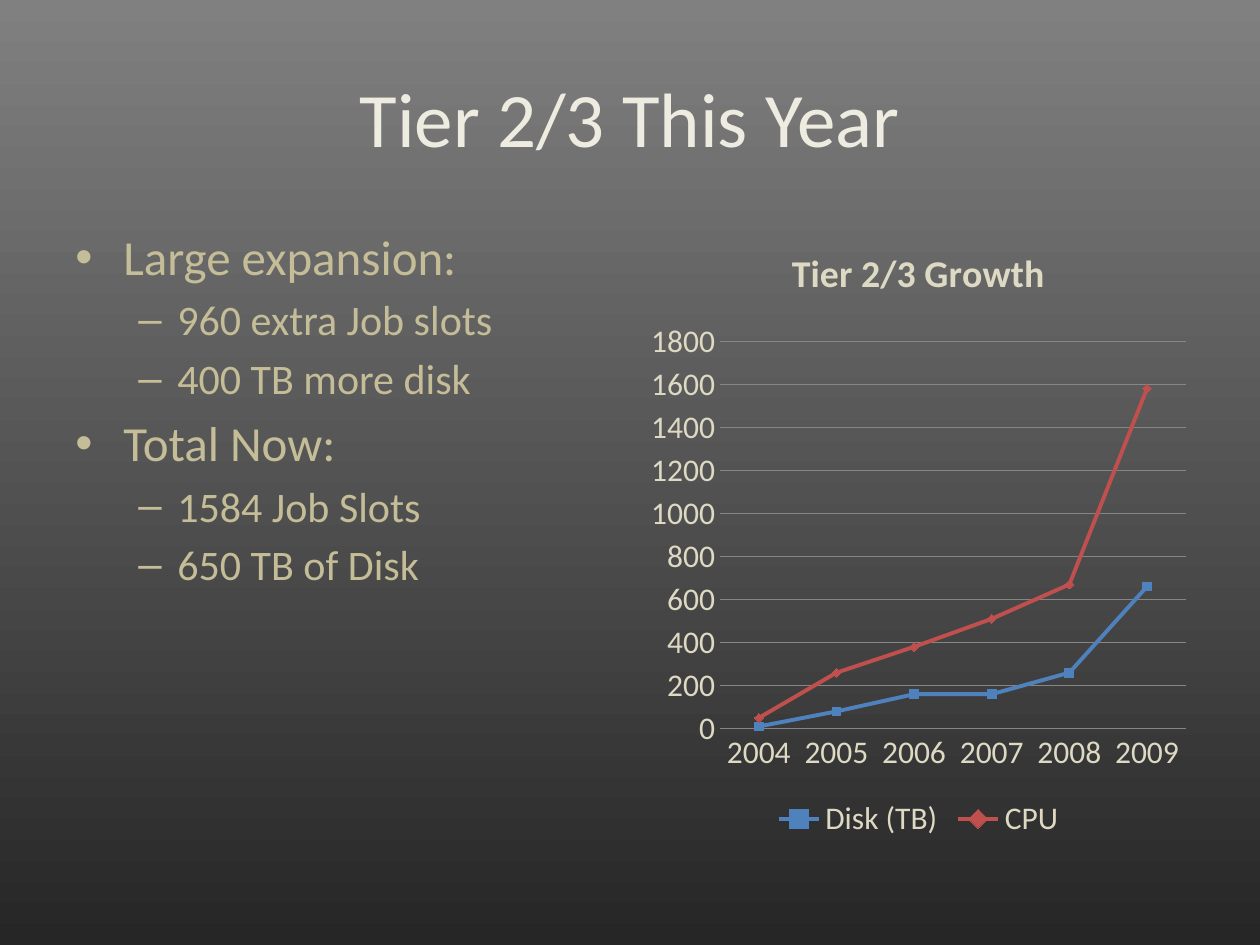
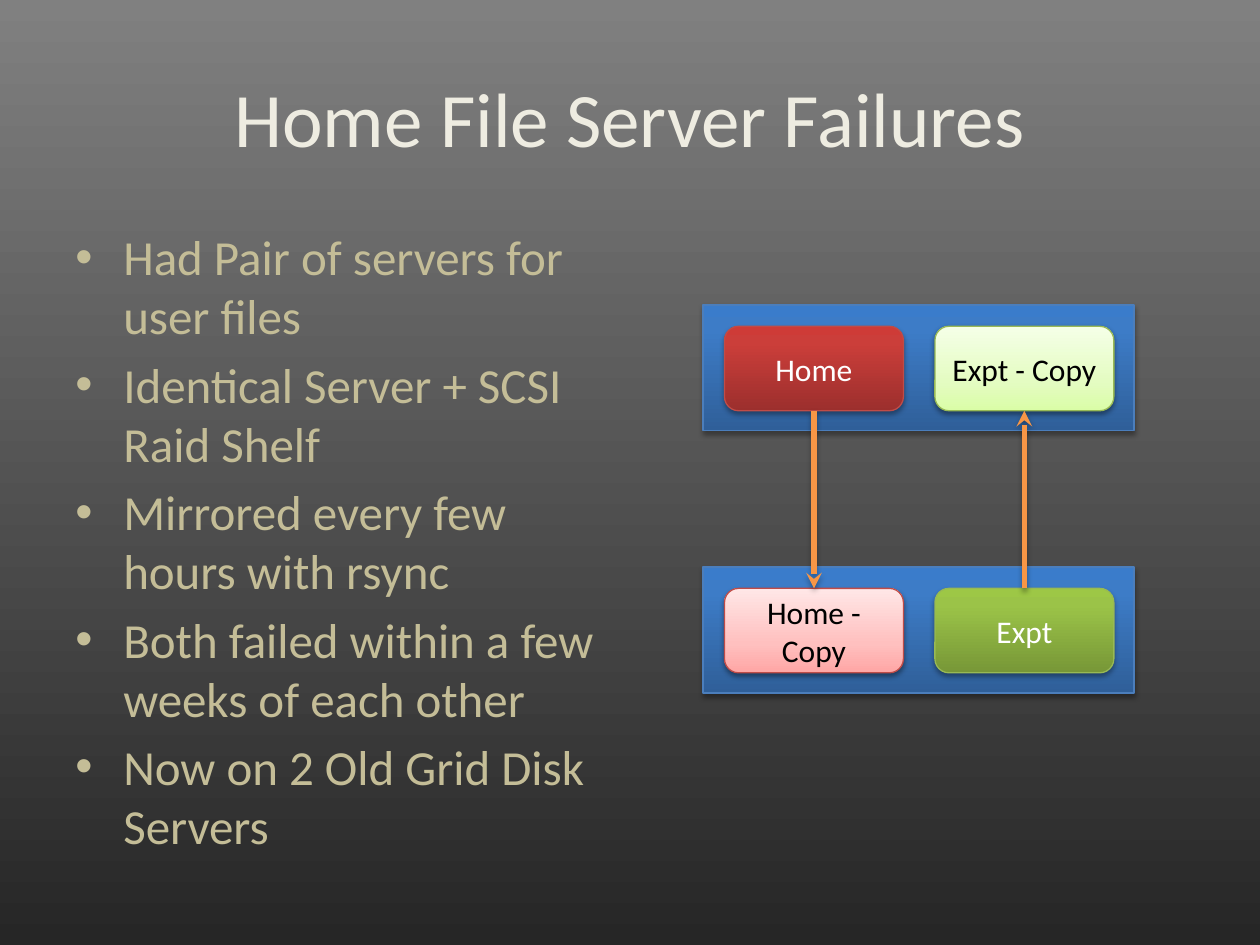
from copy import deepcopy

from lxml import etree
from pptx import Presentation
from pptx import util as u
from pptx.chart.data import CategoryChartData
from pptx.dml.color import RGBColor
from pptx.enum import chart as charts, shapes, text
from pptx.oxml.ns import qn

FONT = "Calibri"
IVORY, SAND, PALE = "EEECE1", "C4BD97", "DDD9C3"
WHITE, BLACK, GRID, ORANGE = "FFFFFF", "000000", "868686", "F79646"
BACKDROP = [(0, "808080"), (100, "262626")]
BLUE = [(0, "2F5F99"), (80, "3D7CC7"), (100, "3A7CCB")]
RED = [(0, "9C2F2D"), (80, "CB3E3A"), (100, "CE3B37")]
GREEN = [(0, "779737"), (80, "9BC348"), (100, "9DC746")]
PINK = [(0, "FFA6A5"), (35, "FFC0BF"), (100, "FFE7E7")]
LIME = [(0, "DAFDA7"), (35, "E4FCC2"), (100, "F5FFE7")]
BLUE_EDGE, RED_EDGE, GREEN_EDGE = "4B7EBC", "BF4C48", "98B955"
BULLETS = [("•", 28, 0.38, 0.38), ("–", 24, 0.81, 0.31)]


def color(value):
    return RGBColor.from_string(value)


class Deck:
    def __init__(self):
        self.prs = Presentation()
        self.prs.slide_width, self.prs.slide_height = u.Inches(10), u.Inches(7.5)
        self.slide = None

    def new_slide(self, title):
        self.slide = self.prs.slides.add_slide(self.prs.slide_layouts[6])
        self.gradient(self.slide.background.fill, self.slide.element, BACKDROP, 270)
        frame = self.textbox(0.5, 0.3, 9, 1.25)
        frame.vertical_anchor = text.MSO_ANCHOR.MIDDLE
        frame.paragraphs[0].alignment = text.PP_ALIGN.CENTER
        self.run(frame.paragraphs[0], title, 44, IVORY)

    def gradient(self, fill, element, stops, angle):
        fill.gradient()
        fill.gradient_angle = angle
        stop_list = next(element.iter(qn("a:gsLst")))
        for _ in stops[2:]:
            stop_list.append(deepcopy(stop_list[0]))
        for stop, (percent, value) in zip(fill.gradient_stops, stops):
            stop.position = percent / 100
            stop.color.rgb = color(value)

    def shadow(self, shape, alpha=35, distance=1.8):
        effects = etree.SubElement(shape.element.spPr, qn("a:effectLst"))
        outer = etree.SubElement(effects, qn("a:outerShdw"), blurRad=str(u.Pt(3.1)),
                                 dist=str(u.Pt(distance)), dir="5400000", rotWithShape="0")
        black = etree.SubElement(outer, qn("a:srgbClr"), val=BLACK)
        etree.SubElement(black, qn("a:alpha"), val=str(alpha * 1000))

    def textbox(self, left, top, width, height):
        box = self.slide.shapes.add_textbox(*map(u.Inches, (left, top, width, height)))
        box.text_frame.word_wrap = True
        return box.text_frame

    def run(self, paragraph, words, size, value):
        run = paragraph.add_run()
        run.text = words
        run.font.name, run.font.size = FONT, u.Pt(size)
        run.font.color.rgb = color(value)

    def bullets(self, items):
        frame = self.textbox(0.5, 1.75, 4.42, 4.95)
        for index, (level, words) in enumerate(items):
            paragraph = frame.add_paragraph() if index else frame.paragraphs[0]
            mark, size, margin, hang = BULLETS[level]
            paragraph.level = level
            paragraph.space_before = u.Pt(size * 0.2)
            props = paragraph._p.get_or_add_pPr()
            props.set("marL", str(u.Inches(margin)))
            props.set("indent", str(-u.Inches(hang)))
            etree.SubElement(props, qn("a:buFont"), typeface="Arial")
            etree.SubElement(props, qn("a:buChar"), char=mark)
            self.run(paragraph, words, size, SAND)

    def panel(self, kind, left, top, width, height, stops, edge, **shadow):
        shape = self.slide.shapes.add_shape(kind, *map(u.Inches, (left, top, width, height)))
        self.gradient(shape.fill, shape.element, stops, 90)
        shape.line.color.rgb = color(edge)
        shape.line.width = u.Pt(0.75)
        self.shadow(shape, **shadow)
        return shape

    def server(self, left, top):
        self.panel(shapes.MSO_SHAPE.RECTANGLE, left, top, 3.42, 1, BLUE, BLUE_EDGE)

    def store(self, left, top, label, stops, edge, is_copy):
        shadow = {"alpha": 38, "distance": 1.6} if is_copy else {}
        store = self.panel(shapes.MSO_SHAPE.ROUNDED_RECTANGLE, left, top, 1.42, 0.67,
                           stops, edge, **shadow)
        frame = store.text_frame
        frame.word_wrap = True
        frame.vertical_anchor = text.MSO_ANCHOR.MIDDLE
        frame.paragraphs[0].alignment = text.PP_ALIGN.CENTER
        self.run(frame.paragraphs[0], label, 18, BLACK if is_copy else WHITE)
        return store

    def arrow(self, source, source_side, target, target_side):
        arrow = self.slide.shapes.add_connector(shapes.MSO_CONNECTOR.STRAIGHT, 0, 0, 0, 0)
        arrow.begin_connect(source, source_side)
        arrow.end_connect(target, target_side)
        arrow.line.color.rgb = color(ORANGE)
        arrow.line.width = u.Pt(3)
        etree.SubElement(arrow.line._get_or_add_ln(), qn("a:tailEnd"), type="stealth")
        self.shadow(arrow)

    def chart_font(self, font, size=18, bold=False):
        font.name, font.size, font.bold = FONT, u.Pt(size), bold
        font.color.rgb = color(PALE)

    def line_chart(self, title, categories, series):
        data = CategoryChartData()
        data.categories = categories
        for name, values, *_ in series:
            data.add_series(name, values)
        chart = self.slide.shapes.add_chart(
            charts.XL_CHART_TYPE.LINE_MARKERS,
            *map(u.Inches, (5.08, 1.75, 4.42, 4.95)), data).chart
        self.chart_font(chart.font)
        chart.has_title = True
        heading = chart.chart_title.text_frame.paragraphs[0].add_run()
        heading.text = title
        self.chart_font(heading.font, 21.6, True)
        chart.has_legend = True
        chart.legend.position = charts.XL_LEGEND_POSITION.BOTTOM
        chart.legend.include_in_layout = False
        self.chart_font(chart.legend.font)
        for axis in (chart.category_axis, chart.value_axis):
            axis.major_tick_mark = axis.minor_tick_mark = charts.XL_TICK_MARK.NONE
            self.chart_font(axis.tick_labels.font)
        chart.value_axis.format.line.fill.background()
        chart.value_axis.has_major_gridlines = True
        for rule in (chart.category_axis, chart.value_axis.major_gridlines):
            rule.format.line.color.rgb = color(GRID)
            rule.format.line.width = u.Pt(0.75)
        chart.plots[0].vary_by_categories = False
        for plotted, (_, _, value, marker) in zip(chart.plots[0].series, series):
            plotted.smooth = False
            plotted.format.line.color.rgb = color(value)
            plotted.format.line.width = u.Pt(2.25)
            plotted.marker.style, plotted.marker.size = marker, 5
            plotted.marker.format.fill.solid()
            plotted.marker.format.fill.fore_color.rgb = color(value)
            plotted.marker.format.line.color.rgb = color(value)


def growth_slide(deck):
    deck.new_slide("Tier 2/3 This Year")
    deck.bullets([
        (0, "Large expansion:"), (1, "960 extra Job slots"), (1, "400 TB more disk"),
        (0, "Total Now:"), (1, "1584 Job Slots"), (1, "650 TB of Disk"),
    ])
    marker = charts.XL_MARKER_STYLE
    deck.line_chart("Tier 2/3 Growth", [str(year) for year in range(2004, 2010)], [
        ("Disk (TB)", (10, 80, 160, 160, 260, 660), "4F81BD", marker.SQUARE),
        ("CPU", (50, 260, 380, 510, 670, 1580), "C0504D", marker.DIAMOND),
    ])


def failures_slide(deck):
    deck.new_slide("Home File Server Failures")
    deck.bullets([(0, words) for words in (
        "Had Pair of servers for user files",
        "Identical Server + SCSI Raid Shelf",
        "Mirrored every few hours with rsync",
        "Both failed within a few weeks of each other",
        "Now on 2 Old Grid Disk Servers",
    )])
    servers = [
        [("Home", RED, RED_EDGE, False), ("Expt - Copy", LIME, GREEN_EDGE, True)],
        [("Home - Copy", PINK, RED_EDGE, True), ("Expt", GREEN, GREEN_EDGE, False)],
    ]
    left, inset, column_step = 5.58, 0.17, 1.67
    stores = {}
    for row, contents in enumerate(servers):
        top = 2.42 + row * 2.08
        deck.server(left, top)
        for column, (label, *look) in enumerate(contents):
            stores[label] = deck.store(left + inset + column * column_step, top + inset,
                                       label, *look)
    deck.arrow(stores["Home"], 2, stores["Home - Copy"], 0)
    deck.arrow(stores["Expt"], 0, stores["Expt - Copy"], 2)


def main():
    deck = Deck()
    growth_slide(deck)
    failures_slide(deck)
    deck.prs.save("out.pptx")


if __name__ == "__main__":
    main()
